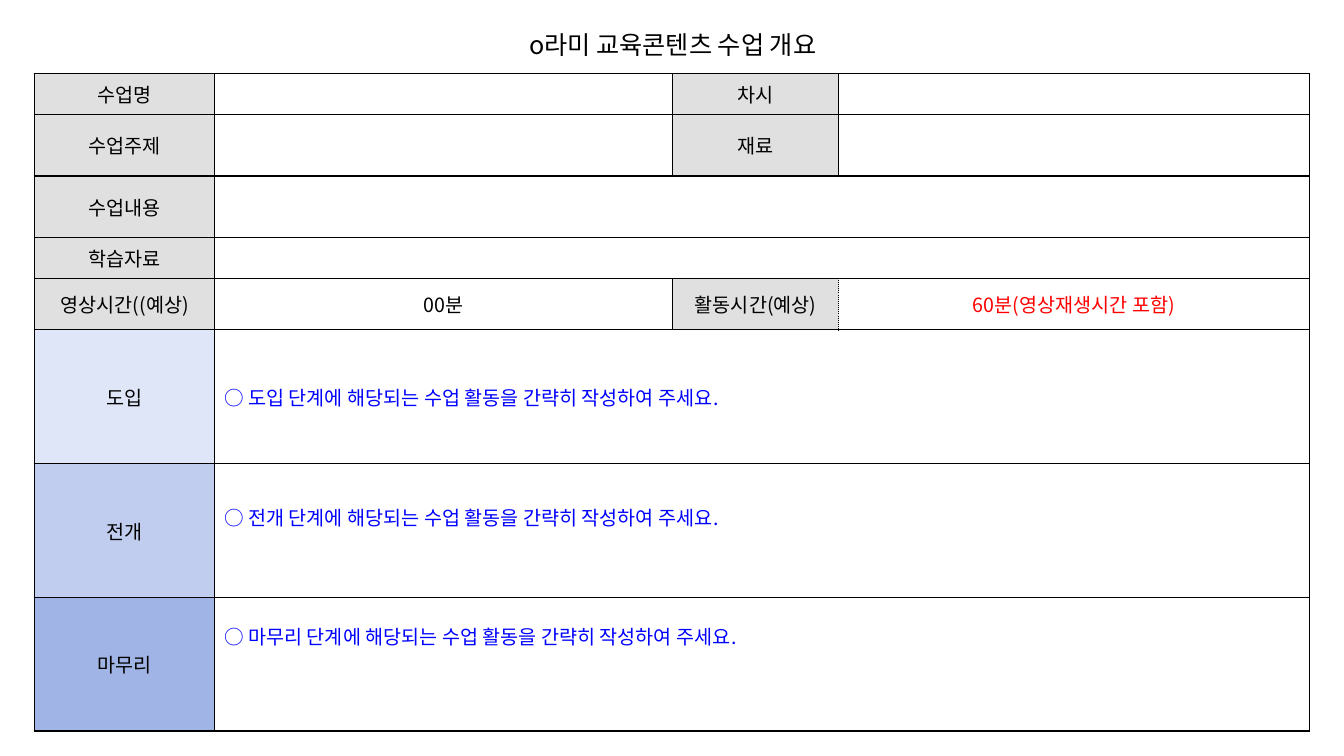
from lxml.etree import SubElement
from pptx import Presentation
from pptx.dml.color import RGBColor
from pptx.enum.text import MSO_ANCHOR, PP_ALIGN
from pptx.oxml.ns import qn
from pptx.util import Pt

FONT = "Noto Sans CJK KR"
COLORS = {"ink": "000000", "label": "E0E0E0", "red": "FF0000", "blue": "0000FF",
          "intro": "DFE6F7", "main": "C0CDEF", "close": "A0B4E6"}
TITLE = "o라미 교육콘텐츠 수업 개요"
ROWS = [
    ["수업명", "", "차시", ""],
    ["수업주제", "", "재료", ""],
    ["수업내용", ""],
    ["학습자료", ""],
    ["영상시간((예상)", "00분", "활동시간(예상)", "60분(영상재생시간 포함)"],
]
# name, fill, extra space below the guide text
STAGES = [("도입", "intro", 0), ("전개", "main", 19), ("마무리", "close", 41)]
GUIDE = "○ {} 단계에 해당되는 수업 활동을 간략히 작성하여 주세요."
WIDTHS = [129, 327, 118.7, 336]
HEIGHTS = [29.2, 43.9, 43.9, 29.2, 36.8] + [95.5] * len(STAGES)
LEFT, TOP = 24.5, 52.7
TIME_ROW = 4


def write(frame, text, size=14, color="ink", align=PP_ALIGN.CENTER):
    par = frame.paragraphs[0]
    par.alignment = align
    run = par.add_run()
    run.text = text
    font = run.font
    font.size, font.name = Pt(size), FONT
    font.color.rgb = RGBColor.from_string(COLORS[color])
    SubElement(font._element, qn("a:ea"), typeface=FONT)


def border(cell, dotted=""):
    """Draw four 1 pt borders; sides named in dotted get dots."""
    props = cell._tc.get_or_add_tcPr()
    for spot, side in enumerate("LRTB"):
        line = props.makeelement(qn(f"a:ln{side}"), {"w": str(Pt(1))})
        fill = SubElement(line, qn("a:solidFill"))
        SubElement(fill, qn("a:srgbClr"), val=COLORS["ink"])
        dash = "sysDot" if side in dotted else "solid"
        SubElement(line, qn("a:prstDash"), val=dash)
        props.insert(spot, line)


def style(cell, text="", fill=None, color="ink", align=PP_ALIGN.CENTER, extra=0):
    cell.vertical_anchor = MSO_ANCHOR.MIDDLE
    if fill:
        cell.fill.solid()
        cell.fill.fore_color.rgb = RGBColor.from_string(COLORS[fill])
    else:
        cell.fill.background()
    if text:
        cell.margin_left = cell.margin_right = Pt(6.8)
        cell.margin_top, cell.margin_bottom = Pt(3.6), Pt(3.6 + extra)
        write(cell.text_frame, text, color=color, align=align)
    else:
        cell.margin_top = cell.margin_bottom = Pt(0)


def main():
    deck = Presentation()
    deck.slide_width, deck.slide_height = Pt(960), Pt(540)
    slide = deck.slides.add_slide(deck.slide_layouts[6])

    frame = slide.shapes.add_table(
        len(HEIGHTS), len(WIDTHS), Pt(LEFT), Pt(TOP),
        Pt(sum(WIDTHS)), Pt(sum(HEIGHTS)))
    plan = frame.table
    plan.first_row = plan.horz_banding = False
    for col, width in zip(plan.columns, WIDTHS):
        col.width = Pt(width)
    for row, height in zip(plan.rows, HEIGHTS):
        row.height = Pt(height)

    for r, texts in enumerate(ROWS):
        for c, text in enumerate(texts):
            style(plan.cell(r, c), text, fill=None if c % 2 else "label",
                  color="red" if (r, c) == (TIME_ROW, 3) else "ink")
        if len(texts) == 2:
            plan.cell(r, 1).merge(plan.cell(r, 3))
    for r, (name, fill, extra) in enumerate(STAGES, len(ROWS)):
        style(plan.cell(r, 0), name, fill=fill)
        style(plan.cell(r, 1), GUIDE.format(name), color="blue",
              align=PP_ALIGN.LEFT, extra=extra)
        plan.cell(r, 1).merge(plan.cell(r, 3))

    dots = {(TIME_ROW, 2): "R", (TIME_ROW, 3): "L"}
    for r in range(len(HEIGHTS)):
        for c in range(len(WIDTHS)):
            border(plan.cell(r, c), dots.get((r, c), ""))

    title = slide.shapes.add_textbox(Pt(365), Pt(17.3), Pt(231), Pt(29))
    title.text_frame.word_wrap = False
    write(title.text_frame, TITLE, size=18)

    deck.save("out.pptx")


if __name__ == "__main__":
    main()
